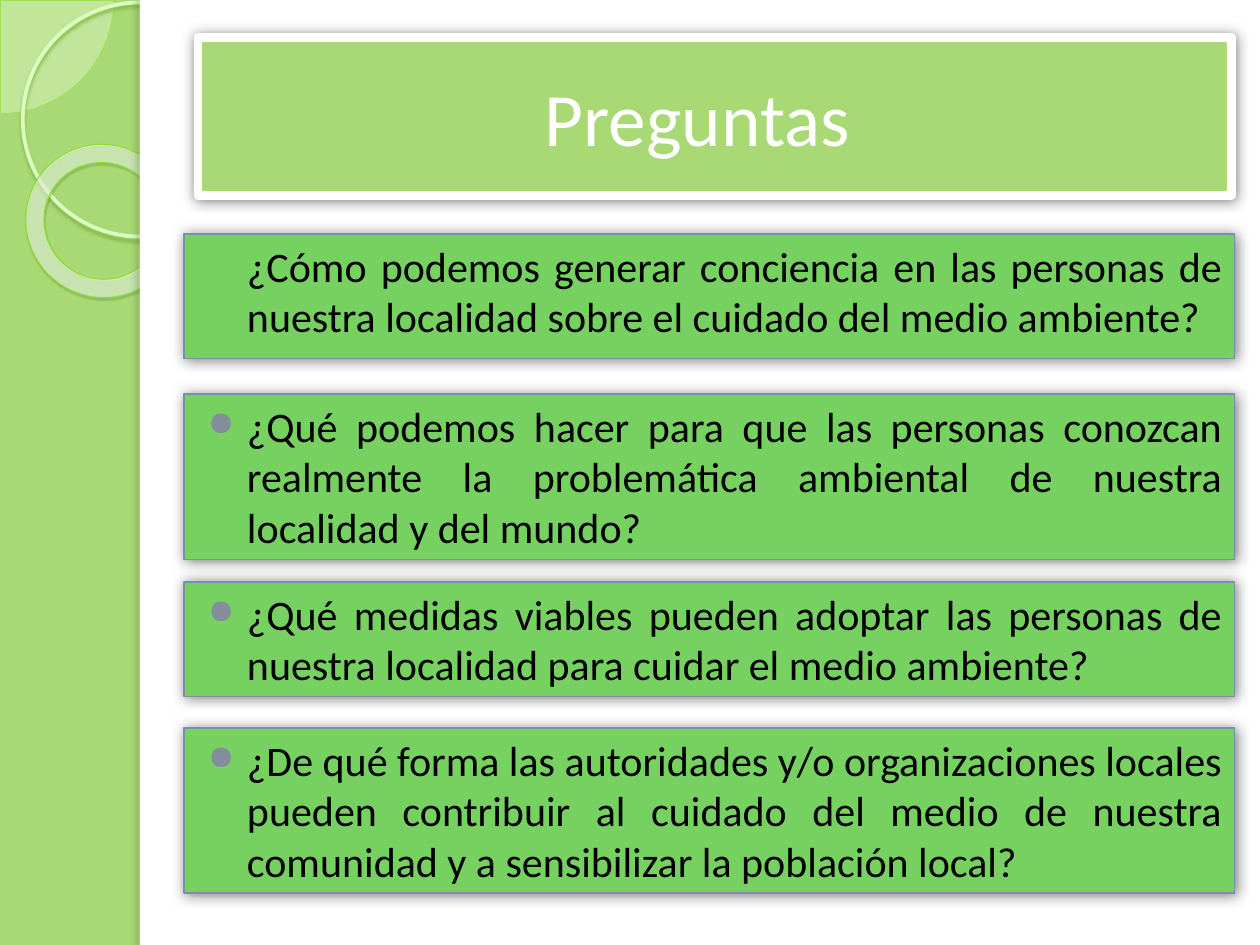
from lxml.etree import SubElement as Sub
from pptx import Presentation
from pptx.dml.color import RGBColor as RGB
from pptx.enum.shapes import MSO_SHAPE as Kind
from pptx.enum.text import MSO_ANCHOR as Anchor, MSO_AUTO_SIZE as Auto, PP_ALIGN as Align
from pptx.oxml.ns import qn
from pptx.util import Cm, Pt

HUES = {
    "lime": "A9D975", "green": "76D161", "white": "FFFFFF", "black": "000000",
    "slate": "808DA9", "bullet": "838D9B", "mint": "F2FFE7", "rim": "92E539",
    "ring": "DCFFC0", "moss": "7EB344", "pale": "F6FFF0", "leaf": "89DE2E",
    "dark": "3F6219", "olive": "546E38",
}
GLOW = ("black", 50, 7.5, 0, 0)


def paint(shape, fill=None, alpha=100, line=None, width=1, shade=None):
    """Set fill, outline and shadow (hue, opacity, blur, distance, angle)."""
    shape.shadow.inherit = False
    if fill:
        shape.fill.solid()
        shape.fill.fore_color.rgb = RGB.from_string(HUES[fill])
        if alpha < 100:
            color = shape.element.spPr.find(qn("a:solidFill"))[0]
            Sub(color, qn("a:alpha"), val=str(alpha * 1000))
    else:
        shape.fill.background()
    if line:
        shape.line.color.rgb = RGB.from_string(HUES[line])
        shape.line.width = Pt(width)
    else:
        shape.line.fill.background()
    if shade:
        hue, dense, blur, dist, angle = shade
        outer = Sub(shape.element.spPr.find(qn("a:effectLst")), qn("a:outerShdw"),
                    blurRad=str(Pt(blur)), dist=str(Pt(dist)),
                    dir=str(angle * 60000), algn="ctr", rotWithShape="0")
        color = Sub(outer, qn("a:srgbClr"), val=HUES[hue])
        Sub(color, qn("a:alpha"), val=str(dense * 1000))


def style(par, size, hue, align):
    par.alignment = align
    for run in par.runs:
        run.font.name = "Calibri"
        run.font.size = Pt(size)
        run.font.color.rgb = RGB.from_string(HUES[hue])


deck = Presentation()
deck.slide_width, deck.slide_height = Cm(25.4), Cm(19.05)
page = deck.slides.add_slide(deck.slide_layouts[5])
page.background.fill.solid()
page.background.fill.fore_color.rgb = RGB.from_string(HUES["lime"])
add = page.shapes.add_shape

# Side decoration
pie = add(Kind.PIE, Cm(-2.26), Cm(-2.26), Cm(4.55), Cm(4.55))
pie.adjustments[0], pie.adjustments[1] = 0, 54
paint(pie, "mint", 33, "rim", 0.25)

hoop = add(Kind.OVAL, Cm(0.46), Cm(0.05), Cm(4.72), Cm(4.72))
paint(hoop, line="ring", width=2.15, shade=("moss", 85, 2, 2, 90))

donut = add(Kind.DONUT, Cm(0.51), Cm(2.92), Cm(3.12), Cm(3.07))
donut.adjustments[0] = 0.12
donut.rotation = 38.6
paint(donut, "pale", 55, "leaf", 0.58, ("dark", 35, 1, 1.2, 75))

# White panel and its shaded edge
panel = add(Kind.RECTANGLE, Cm(2.82), 0, Cm(22.58), Cm(19.05))
paint(panel, "white")
edge = add(Kind.RECTANGLE, Cm(2.82), 0, Cm(0.2), Cm(19.05))
paint(edge, "white", shade=("olive", 25, 3, 3, 180))

# Title, brought in front of the panel
title = page.shapes.title
page.shapes.element.append(title.element)
title.left, title.top, title.width, title.height = Cm(3.99), Cm(0.76), Cm(20.83), Cm(3.18)
paint(title, "lime", line="white", width=5, shade=GLOW)
frame = title.text_frame
frame.text = "Preguntas"
frame.auto_size = Auto.NONE
frame.vertical_anchor = Anchor.MIDDLE
frame.margin_right = Cm(0.95)
style(frame.paragraphs[0], 43, "white", Align.CENTER)

# Question boxes: top, height, bullet, text
asks = [
    (4.72, 2.51, False, "¿Cómo podemos generar conciencia en las personas de nuestra localidad sobre el cuidado del medio ambiente?"),
    (7.95, 3.33, True, "¿Qué podemos hacer para que las personas conozcan realmente la problemática ambiental de nuestra localidad y del mundo?"),
    (11.73, 2.31, True, "¿Qué medidas viables pueden adoptar las personas de nuestra localidad para cuidar el medio ambiente?"),
    (14.68, 3.33, True, "¿De qué forma las autoridades y/o organizaciones locales pueden contribuir al cuidado del medio de nuestra comunidad y a sensibilizar la población local?"),
]
for top, height, dot, text in asks:
    box = add(Kind.RECTANGLE, Cm(3.71), Cm(top), Cm(21.18), Cm(height))
    paint(box, "green", line="slate", shade=GLOW)
    frame = box.text_frame
    frame.text = text
    frame.word_wrap = True
    frame.vertical_anchor = Anchor.TOP
    par = frame.paragraphs[0]
    style(par, 24, "black", Align.JUSTIFY)
    par.space_before = Pt(6)
    props = par._p.get_or_add_pPr()
    props.set("marL", str(Cm(1.02)))
    if dot:
        props.set("indent", str(Cm(-0.79)))
        Sub(Sub(props, qn("a:buClr")), qn("a:srgbClr"), val=HUES["bullet"])
        Sub(props, qn("a:buSzPct"), val="80000")
        Sub(props, qn("a:buChar"), char="●")

deck.save("out.pptx")
